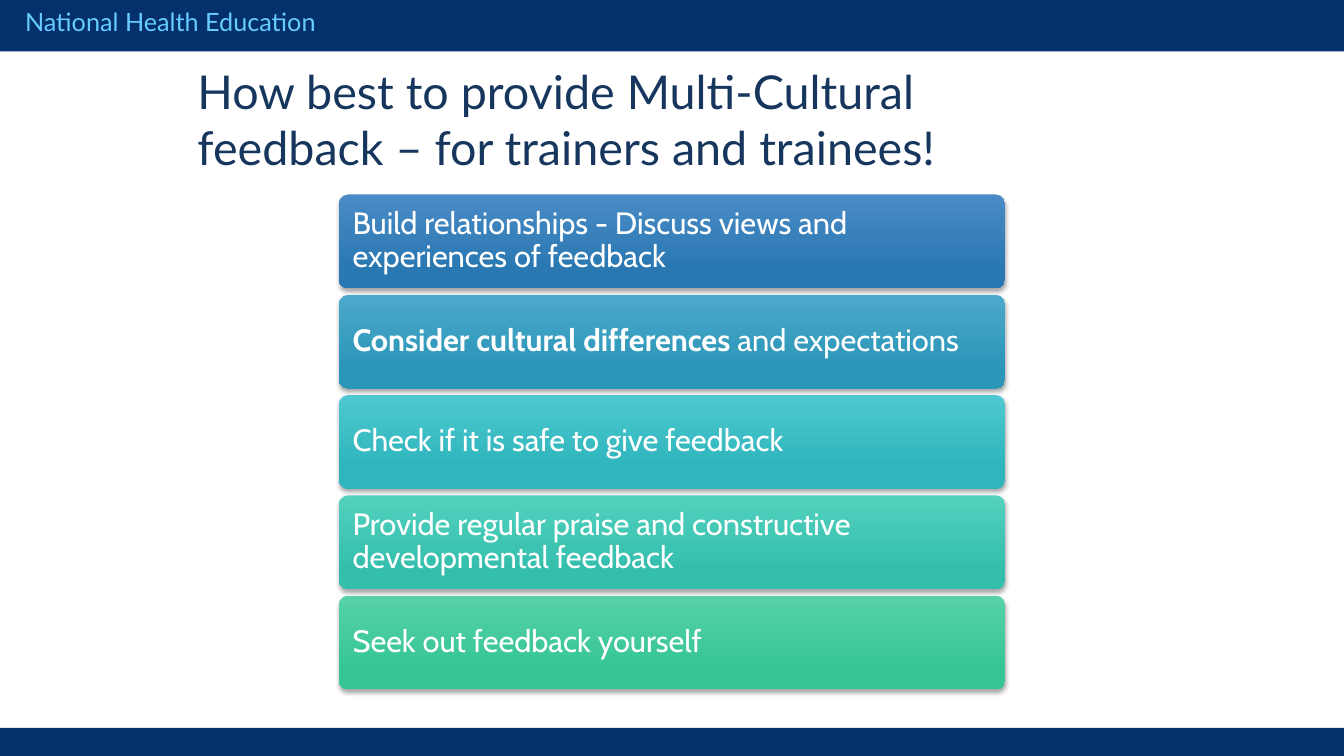
from lxml import etree
from pptx import Presentation
from pptx.dml.color import RGBColor
from pptx.enum.shapes import MSO_SHAPE
from pptx.enum.text import MSO_ANCHOR, PP_ALIGN
from pptx.util import Inches, Pt

RECT, ROUND = MSO_SHAPE.RECTANGLE, MSO_SHAPE.ROUNDED_RECTANGLE
TOP, MIDDLE = MSO_ANCHOR.TOP, MSO_ANCHOR.MIDDLE
LEFT = PP_ALIGN.LEFT
WIDTH, HEIGHT = 13.33, 7.5
NAVY, INK, SKY, WHITE = "04306C", "17365E", "66CCFF", "FFFFFF"

# Card column: first top, last top, card size
FIRST, LAST = 1.93, 5.91
CARD_W, CARD_H = 6.61, 0.93

# Gradient start, gradient end, runs as (text, bold)
CARDS = [
    ("4A8BC6", "2A78B2",
     [("Build relationships - Discuss views and experiences of feedback", False)]),
    ("4BA9CC", "2C96B8",
     [("Consider cultural differences ", True), ("and expectations", False)]),
    ("4DC8D0", "2FB5BC", [("Check if it is safe to give feedback", False)]),
    ("52D1BE", "34BFAC",
     [("Provide regular praise and constructive developmental feedback", False)]),
    ("56D2A7", "36C596", [("Seek out feedback yourself", False)]),
]

SHADOW = (
    '<a:effectLst xmlns:a="http://schemas.openxmlformats.org/drawingml/2006/main">'
    '<a:outerShdw blurRad="38100" dist="25400" dir="5400000" rotWithShape="0">'
    '<a:srgbClr val="000000"><a:alpha val="35000"/></a:srgbClr>'
    '</a:outerShdw></a:effectLst>'
)


def color(code):
    return RGBColor.from_string(code)


def place(left, top, width, height):
    return [Inches(n) for n in (left, top, width, height)]


def write(shape, runs, font, size, ink, anchor):
    """Fill the shape with one left-aligned paragraph."""
    frame = shape.text_frame
    frame.word_wrap = True
    frame.vertical_anchor = anchor
    para = frame.paragraphs[0]
    para.alignment = LEFT
    for text, bold in runs:
        run = para.add_run()
        run.text = text
        run.font.name = font
        run.font.size = Pt(size)
        run.font.bold = bold
        run.font.color.rgb = color(ink)
    return para


def add_band(slide, top, height):
    band = slide.shapes.add_shape(RECT, *place(0, top, WIDTH, height))
    band.shadow.inherit = False
    band.fill.solid()
    band.fill.fore_color.rgb = color(NAVY)
    band.line.fill.background()


def add_label(slide, box, text, size, ink, anchor):
    label = slide.shapes.add_textbox(*place(*box))
    write(label, [(text, False)], "Lato", size, ink, anchor)


def add_card(slide, top, start, end, runs):
    left = (WIDTH - CARD_W) / 2
    card = slide.shapes.add_shape(ROUND, *place(left, top, CARD_W, CARD_H))
    card.adjustments[0] = 0.1

    # Vertical gradient and soft shadow
    card.fill.gradient()
    card.fill.gradient_angle = 270
    for stop, spot, code in zip(card.fill.gradient_stops, (0, 0.78), (start, end)):
        stop.position = spot
        stop.color.rgb = color(code)
    card.line.fill.background()
    card._element.spPr.append(etree.fromstring(SHADOW))

    frame = card.text_frame
    frame.margin_left = frame.margin_right = Inches(0.11)
    para = write(card, runs, "Cabin", 22, WHITE, MIDDLE)
    para.line_spacing = 0.9


def main():
    deck = Presentation()
    deck.slide_width, deck.slide_height = Inches(WIDTH), Inches(HEIGHT)
    slide = deck.slides.add_slide(deck.slide_layouts[6])

    # Header and footer
    add_band(slide, 0, 0.51)
    add_band(slide, HEIGHT - 0.28, 0.28)
    add_label(slide, (0.15, 0.01, 5.66, 0.4),
              "National Health Education", 18, SKY, TOP)

    # Title
    add_label(slide, (1.86, 0.55, 8.4, 1.25),
              "How best to provide Multi-Cultural feedback – for trainers and trainees!",
              33.3, INK, MIDDLE)

    # Advice cards, evenly spread
    pitch = (LAST - FIRST) / (len(CARDS) - 1)
    for row, (start, end, runs) in enumerate(CARDS):
        add_card(slide, FIRST + row * pitch, start, end, runs)

    deck.save("out.pptx")


if __name__ == "__main__":
    main()
